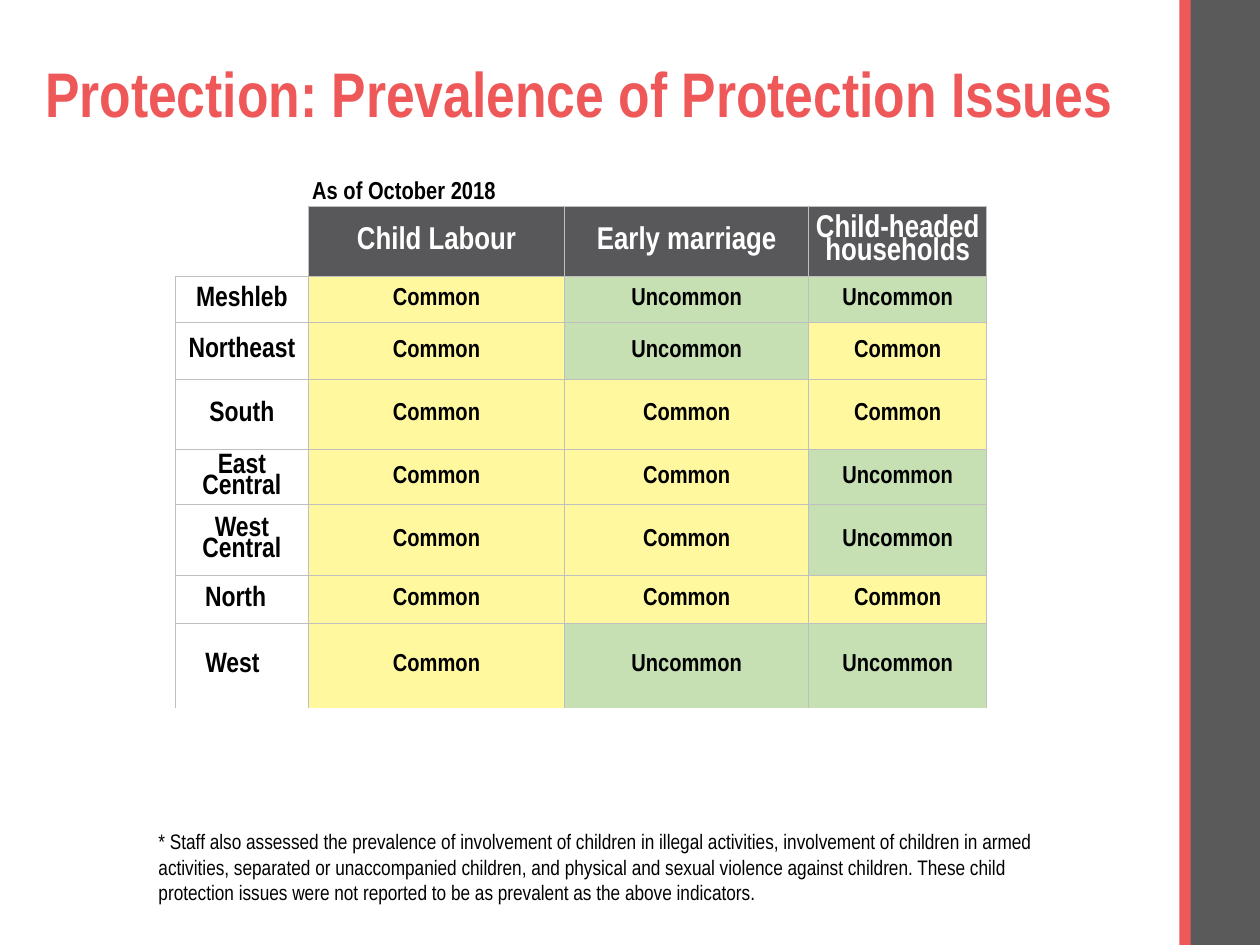
from lxml import etree
from pptx import Presentation
from pptx.dml.color import RGBColor
from pptx.enum.shapes import MSO_SHAPE
from pptx.enum.text import MSO_ANCHOR, PP_ALIGN
from pptx.oxml.ns import qn
from pptx.util import Inches, Pt

RECTANGLE = MSO_SHAPE.RECTANGLE
TOP, MIDDLE = MSO_ANCHOR.TOP, MSO_ANCHOR.MIDDLE
LEFT, CENTER = PP_ALIGN.LEFT, PP_ALIGN.CENTER

WIDTH, HEIGHT = 10, 7.5
FONT = "Arial Narrow"
COLORS = {
    "red": "EE5859", "bar": "5A5A5A", "header": "58585A", "border": "BFBFBF",
    "white": "FFFFFF", "black": "000000",
    "Common": "FFF89F", "Uncommon": "C6E0B4",
}

# Table content and grid
COLUMN_WIDTHS = [1.06, 2.03, 1.94, 1.41]
ROW_HEIGHTS = [0.55, 0.37, 0.45, 0.56, 0.43, 0.56, 0.38, 0.67]
ISSUES = ["", "Child Labour", "Early marriage", "Child-headed households"]
REGIONS = [
    ["Meshleb", "Common", "Uncommon", "Uncommon"],
    ["Northeast", "Common", "Uncommon", "Common"],
    ["South", "Common", "Common", "Common"],
    ["East Central", "Common", "Common", "Uncommon"],
    ["West Central", "Common", "Common", "Uncommon"],
    ["North", "Common", "Common", "Common"],
    ["West", "Common", "Uncommon", "Uncommon"],
]
# Region names set a little left of the column centre
RIGHT_MARGINS = {"North": 0.11, "West": 0.16}
NOTE = (
    "* Staff also assessed the prevalence of involvement of children in illegal "
    "activities, involvement of children in armed activities, separated or "
    "unaccompanied children, and physical and sexual violence against children. "
    "These child protection issues were not reported to be as prevalent as the "
    "above indicators."
)


def rgb(name):
    return RGBColor.from_string(COLORS[name])


def write(frame, text, size, color="black", bold=True, align=LEFT, spacing=None):
    para = frame.paragraphs[0]
    para.alignment = align
    if spacing:
        para.line_spacing = spacing
    span = para.add_run()
    span.text = text
    for key, value in {"name": FONT, "size": Pt(size), "bold": bold}.items():
        setattr(span.font, key, value)
    span.font.color.rgb = rgb(color)


def add_text(page, place, text, size, anchor=TOP, **style):
    box = page.shapes.add_textbox(*map(Inches, place))
    box.text_frame.word_wrap = True
    box.text_frame.vertical_anchor = anchor
    write(box.text_frame, text, size, **style)


def add_bar(page, left, width, color):
    bar = page.shapes.add_shape(
        RECTANGLE, Inches(left), 0, Inches(width), Inches(HEIGHT))
    bar.shadow.inherit = False
    bar.fill.solid()
    bar.fill.fore_color.rgb = rgb(color)
    bar.line.fill.background()


def set_borders(cell, shown):
    """Draw the sides in shown; the other sides get no line."""
    properties = cell._tc.get_or_add_tcPr()
    for position, side in enumerate("LRTB"):
        line = etree.Element(qn(f"a:ln{side}"), w=str(Pt(0.5)))
        if side in shown:
            fill = etree.SubElement(line, qn("a:solidFill"))
            etree.SubElement(fill, qn("a:srgbClr"), val=COLORS["border"])
        else:
            etree.SubElement(line, qn("a:noFill"))
        properties.insert(position, line)


def fill_cell(cell, text, size, fill=None, color="black"):
    margins = {"margin_left": 0.01, "margin_top": 0.01, "margin_bottom": 0,
               "margin_right": RIGHT_MARGINS.get(text, 0.01)}
    for key, value in margins.items():
        setattr(cell, key, Inches(value))
    cell.vertical_anchor = MIDDLE
    if fill:
        cell.fill.solid()
        cell.fill.fore_color.rgb = rgb(fill)
    else:
        cell.fill.background()
    if text:
        write(cell.text_frame, text, size, color, align=CENTER, spacing=0.8)


def add_issue_table(page, left, top):
    rows = [ISSUES] + REGIONS
    frame = page.shapes.add_table(
        len(rows), len(ISSUES), Inches(left), Inches(top),
        Inches(sum(COLUMN_WIDTHS)), Inches(sum(ROW_HEIGHTS)))
    table = frame.table
    table.first_row = table.horz_banding = False
    for column, width in zip(table.columns, COLUMN_WIDTHS):
        column.width = Inches(width)
    for row, height in zip(table.rows, ROW_HEIGHTS):
        row.height = Inches(height)

    for r, values in enumerate(rows):
        for c, text in enumerate(values):
            cell = table.cell(r, c)
            if r == 0:
                fill_cell(cell, text, 18, "header" if c else None, "white")
            elif c == 0:
                fill_cell(cell, text, 16)
            else:
                fill_cell(cell, text, 14, text)
            # The corner cell is open, and so is the foot of the table
            if r == c == 0:
                set_borders(cell, "RB")
            else:
                set_borders(cell, "LRT" if r == len(rows) - 1 else "LRTB")


def main():
    deck = Presentation()
    deck.slide_width, deck.slide_height = Inches(WIDTH), Inches(HEIGHT)
    page = deck.slides.add_slide(deck.slide_layouts[6])

    # Side bars
    add_bar(page, 9.44, 0.56, "bar")
    add_bar(page, 9.36, 0.09, "red")

    # Title
    add_text(page, (0.26, 0.4, 8.69, 0.74),
             "Protection: Prevalence of Protection Issues", 36,
             anchor=MIDDLE, color="red", spacing=0.9)

    # Table with its date and footnote
    add_issue_table(page, 1.39, 1.64)
    add_text(page, (1.16, 6.53, 7.36, 0.75), NOTE, 12, bold=False)
    add_text(page, (2.38, 1.34, 5.44, 0.34), "As of October 2018", 14)

    deck.save("out.pptx")


if __name__ == "__main__":
    main()
